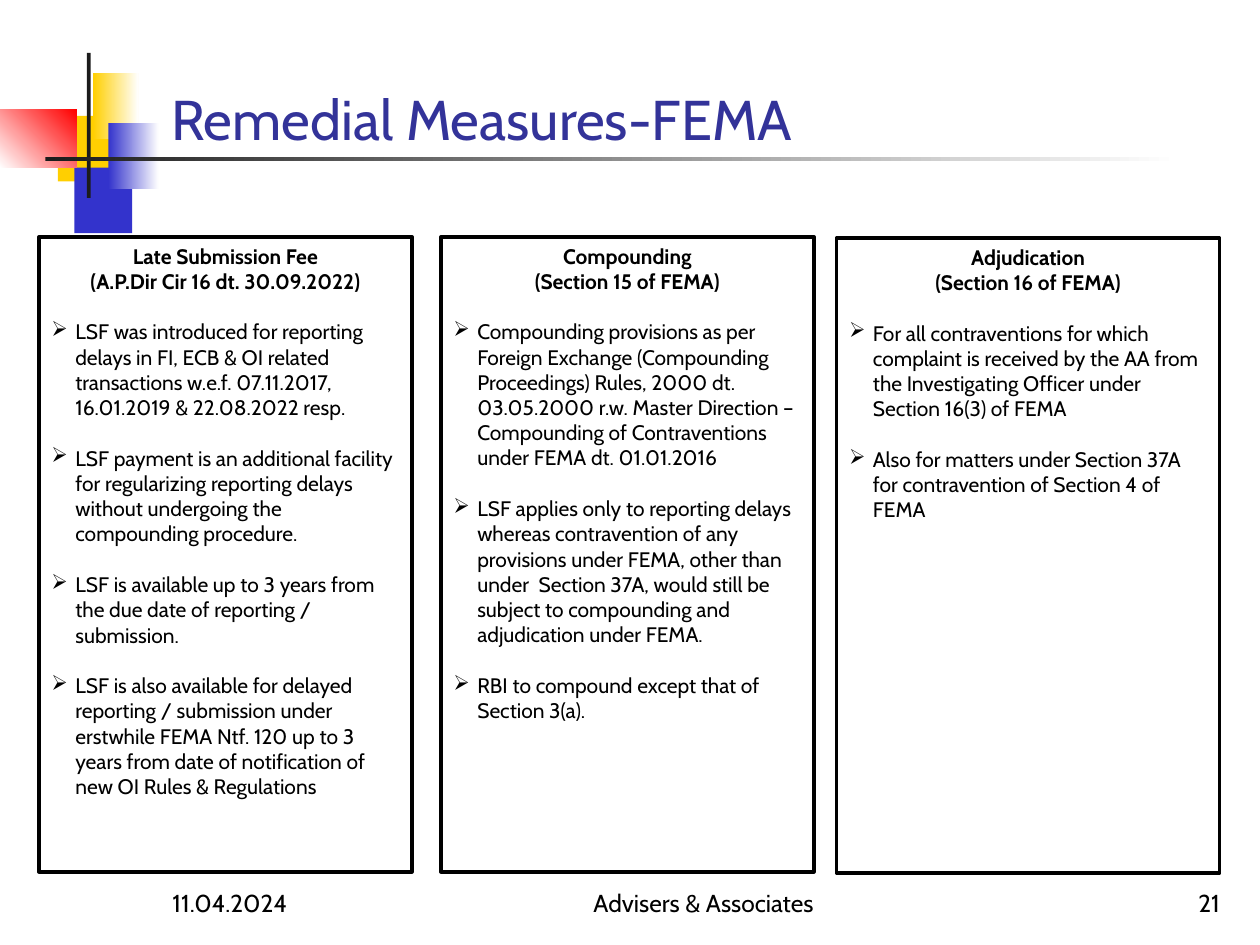
from dataclasses import dataclass

from lxml import etree
from pptx import Presentation
from pptx import util as u
from pptx.dml.color import RGBColor
from pptx.enum import shapes, text
from pptx.oxml import ns

LEFT, MID, RIGHT = text.PP_ALIGN.LEFT, text.PP_ALIGN.CENTER, text.PP_ALIGN.RIGHT


@dataclass(frozen=True)
class Theme:
    font: str = "Cabin"
    title: float = 32
    foot: float = 14
    body: float = 12
    gap: float = 14.6
    indent: float = 0.19
    ink: str = "000000"
    head: str = "333399"
    white: str = "FFFFFF"
    gold: str = "FFCF01"
    blue: str = "3333CC"
    red: str = "FF0000"
    dark: str = "1C1C1C"


T = Theme()

PANELS = [
    ((0.31, 1.88, 2.96, 5.04),
     ["Late Submission Fee", "(A.P.Dir Cir 16 dt. 30.09.2022)"],
     ["LSF was introduced for reporting delays in FI, ECB & OI related "
      "transactions w.e.f. 07.11.2017, 16.01.2019 & 22.08.2022 resp.",
      "LSF payment is an additional facility for regularizing reporting "
      "delays without undergoing the compounding procedure.",
      "LSF is available up to 3 years from the due date of reporting / "
      "submission.",
      "LSF is also available for delayed reporting / submission under "
      "erstwhile FEMA Ntf. 120 up to 3 years from date of notification of "
      "new OI Rules & Regulations"]),
    ((3.5, 1.88, 2.96, 5.04),
     ["Compounding", "(Section 15 of FEMA)"],
     ["Compounding provisions as per Foreign Exchange (Compounding "
      "Proceedings) Rules, 2000 dt. 03.05.2000 r.w. Master Direction – "
      "Compounding of Contraventions under FEMA dt. 01.01.2016",
      "LSF applies only to reporting delays whereas contravention of any "
      "provisions under FEMA, other than under  Section 37A, would still be "
      "subject to compounding and adjudication under FEMA.",
      "RBI to compound except that of Section 3(a)."]),
    ((6.64, 1.89, 3.04, 5.04),
     ["Adjudication", "(Section 16 of FEMA)"],
     ["For all contraventions for which complaint is received by the AA from "
      "the Investigating Officer under Section 16(3) of FEMA",
      "Also for matters under Section 37A for contravention of Section 4 of "
      "FEMA"]),
]


def rgb(code):
    return RGBColor.from_string(code)


def place(box):
    return [u.Inches(n) for n in box]


def write(frame, words, size=T.body, color=T.ink, bold=False, align=LEFT,
          before=0, bullet=None):
    """Fill the empty first paragraph of the frame, or add a new one."""
    first = frame.paragraphs[0]
    para = first if not first.runs else frame.add_paragraph()
    para.alignment = align
    para.space_before = u.Pt(before)
    run = para.add_run()
    run.text = words
    font = run.font
    font.name, font.size, font.bold = T.font, u.Pt(size), bold
    font.color.rgb = rgb(color)
    if bullet:
        props = para._p.get_or_add_pPr()
        props.set("marL", str(u.Inches(T.indent)))
        props.set("indent", str(-u.Inches(T.indent)))
        etree.SubElement(props, ns.qn("a:buChar")).set("char", bullet)


def block(slide, box, color, fade=None, angle=0):
    """Add a rectangle, plain or fading from color to fade."""
    shape = slide.shapes.add_shape(shapes.MSO_SHAPE.RECTANGLE, *place(box))
    shape.shadow.inherit = False
    shape.line.fill.background()
    if fade:
        shape.fill.gradient()
        shape.fill.gradient_angle = angle
        for stop, code in zip(shape.fill.gradient_stops, (color, fade)):
            stop.color.rgb = rgb(code)
    else:
        shape.fill.solid()
        shape.fill.fore_color.rgb = rgb(color)
    return shape


def label(slide, box, words, **style):
    frame = slide.shapes.add_textbox(*place(box)).text_frame
    frame.word_wrap = True
    frame.vertical_anchor = text.MSO_ANCHOR.BOTTOM
    write(frame, words, **style)


def panel(slide, box, heads, points):
    shape = block(slide, box, T.white)
    shape.line.color.rgb = rgb(T.ink)
    shape.line.width = u.Pt(2)
    frame = shape.text_frame
    frame.word_wrap = True
    frame.vertical_anchor = text.MSO_ANCHOR.TOP
    for line in heads:
        write(frame, line, bold=True, align=MID)
    for point in points:
        write(frame, point, before=T.gap, bullet="➢")


def motif(slide):
    block(slide, (0.46, 0.92, 0.48, 0.52), T.gold)
    block(slide, (0.59, 1.33, 0.46, 0.52), T.blue)
    block(slide, (0.74, 0.58, 0.36, 0.52), T.gold, T.white)
    block(slide, (0.86, 0.98, 0.4, 0.52), T.blue, T.white)
    block(slide, (0, 0.87, 0.61, 0.46), T.white, T.red, angle=45)
    block(slide, (0.69, 0.42, 0.03, 1.15), T.dark)
    block(slide, (0.36, 1.25, 9, 0.03), T.dark, T.white)


def main():
    deck = Presentation()
    deck.slide_width, deck.slide_height = u.Inches(10), u.Inches(7.5)
    slide = deck.slides.add_slide(deck.slide_layouts[6])
    motif(slide)
    label(slide, (1.26, 0.23, 8.52, 1.02), "Remedial Measures-FEMA",
          size=T.title, color=T.head)
    for left, width, words, align in [
            (1.27, 2.08, "11.04.2024", LEFT),
            (4, 3.17, "Advisers & Associates", MID),
            (7.7, 2.08, "21", RIGHT)]:
        label(slide, (left, 6.83, width, 0.5), words, size=T.foot, align=align)
    for box, heads, points in PANELS:
        panel(slide, box, heads, points)
    deck.save("out.pptx")


if __name__ == "__main__":
    main()
